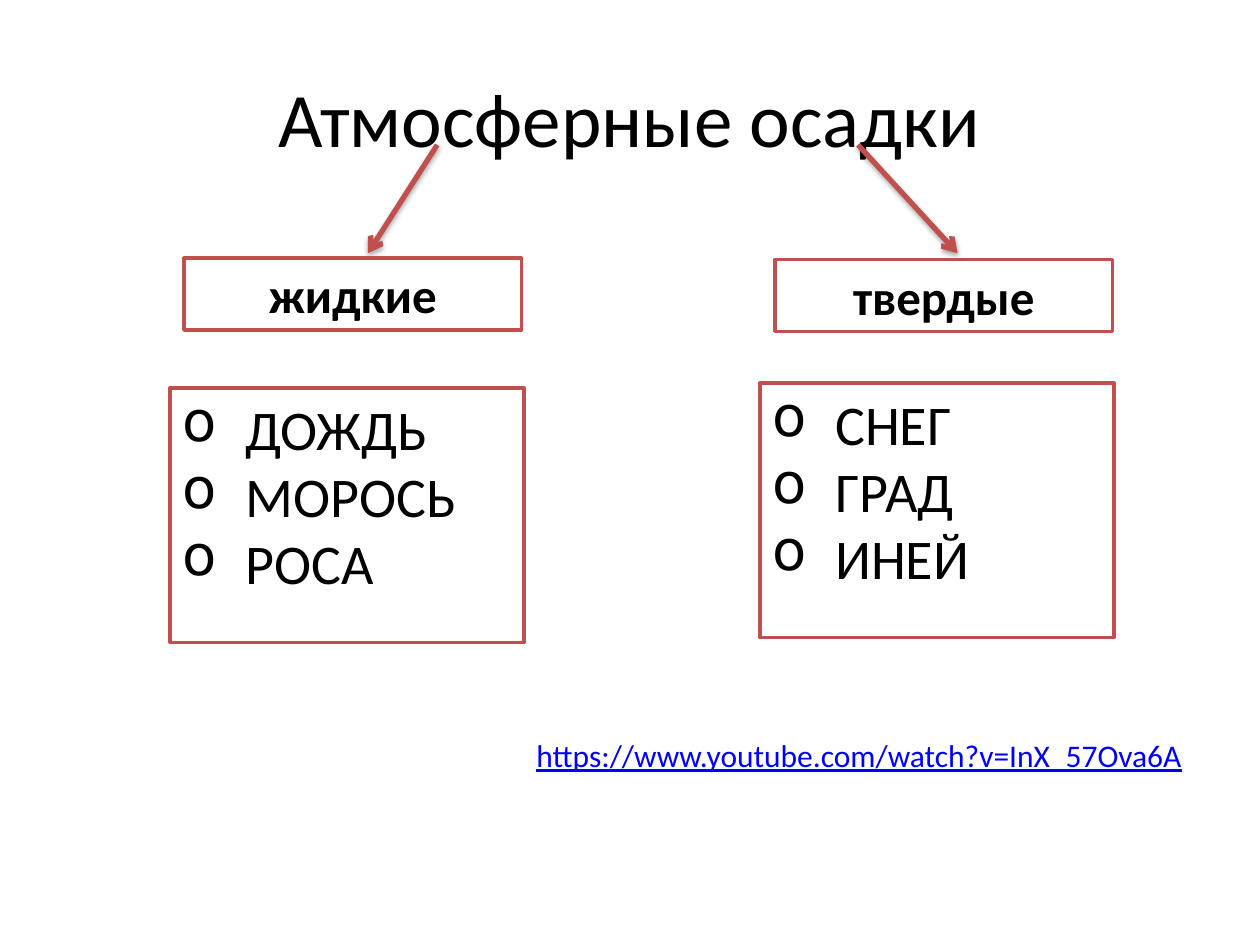
from lxml.etree import SubElement
from pptx import Presentation
from pptx.dml.color import RGBColor
from pptx.enum.shapes import MSO_CONNECTOR, MSO_SHAPE
from pptx.enum.text import MSO_ANCHOR, PP_ALIGN
from pptx.oxml.ns import qn
from pptx.util import Inches, Pt

BLACK, WHITE, RED, BLUE = "000000", "FFFFFF", "C0504D", "0000FF"


def rgb(value):
    return RGBColor.from_string(value)


def add_run(paragraph, wording, size, color=BLACK, bold=False, underline=False):
    run = paragraph.add_run()
    run.text = wording
    font = run.font
    font.name, font.size, font.bold = "Calibri", Pt(size), bold
    font.underline = underline
    font.color.rgb = rgb(color)


def add_label(slide, box, wording, size, align, **style):
    label = slide.shapes.add_textbox(*map(Inches, box))
    frame = label.text_frame
    frame.word_wrap = True
    frame.vertical_anchor = MSO_ANCHOR.MIDDLE
    paragraph = frame.paragraphs[0]
    paragraph.alignment = align
    add_run(paragraph, wording, size, **style)


def add_frame(slide, box, anchor):
    panel = slide.shapes.add_shape(MSO_SHAPE.RECTANGLE, *map(Inches, box))
    panel.shadow.inherit = False
    panel.fill.solid()
    panel.fill.fore_color.rgb = rgb(WHITE)
    panel.line.color.rgb = rgb(RED)
    panel.line.width = Pt(2)
    panel.text_frame.word_wrap = True
    panel.text_frame.vertical_anchor = anchor
    return panel.text_frame


def add_kind(slide, box, wording):
    paragraph = add_frame(slide, box, MSO_ANCHOR.MIDDLE).paragraphs[0]
    paragraph.alignment = PP_ALIGN.CENTER
    add_run(paragraph, wording, 28, bold=True)


def add_examples(slide, box, examples):
    frame = add_frame(slide, box, MSO_ANCHOR.TOP)
    for index, example in enumerate(examples):
        paragraph = frame.add_paragraph() if index else frame.paragraphs[0]
        paragraph.alignment = PP_ALIGN.LEFT
        properties = paragraph._p.get_or_add_pPr()
        properties.set("marL", str(Inches(0.5)))
        properties.set("indent", str(Inches(-0.5)))
        SubElement(properties, qn("a:buChar"), char="o")
        add_run(paragraph, example, 32)


def add_arrow(slide, start, end):
    arrow = slide.shapes.add_connector(
        MSO_CONNECTOR.STRAIGHT, *map(Inches, start + end))
    arrow.line.color.rgb = rgb(RED)
    arrow.line.width = Pt(3)
    SubElement(arrow.line._get_or_add_ln(), qn("a:tailEnd"), type="arrow")
    effects = SubElement(arrow._element.spPr, qn("a:effectLst"))
    shadow = SubElement(
        effects, qn("a:outerShdw"), blurRad=str(Pt(3.1)), dist=str(Pt(1.8)),
        dir="5400000", rotWithShape="0")
    shade = SubElement(shadow, qn("a:srgbClr"), val=BLACK)
    SubElement(shade, qn("a:alpha"), val="35000")


def main():
    presentation = Presentation()
    presentation.slide_width, presentation.slide_height = Inches(10), Inches(7.5)
    slide = presentation.slides.add_slide(presentation.slide_layouts[6])

    add_label(slide, (0.5, 0.3, 9, 1.25), "Атмосферные осадки", 44, PP_ALIGN.CENTER)
    branches = [
        ((3.47, 1.15), (2.92, 2.01), "жидкие", (1.46, 2.05),
         ("ДОЖДЬ", "МОРОСЬ", "РОСА"), (1.35, 3.08)),
        ((6.81, 1.15), (7.6, 2.01), "твердые", (6.15, 2.06),
         ("СНЕГ", "ГРАД", "ИНЕЙ"), (6.03, 3.04)),
    ]
    for start, end, kind, kind_corner, examples, examples_corner in branches:
        add_arrow(slide, start, end)
        add_kind(slide, kind_corner + (2.68, 0.57), kind)
        add_examples(slide, examples_corner + (2.81, 2.02), examples)
    add_label(slide, (4.16, 5.79, 5.37, 0.4),
              "https://www.youtube.com/watch?v=InX_57Ova6A", 18, PP_ALIGN.LEFT,
              color=BLUE, underline=True)

    presentation.save("out.pptx")


if __name__ == "__main__":
    main()
